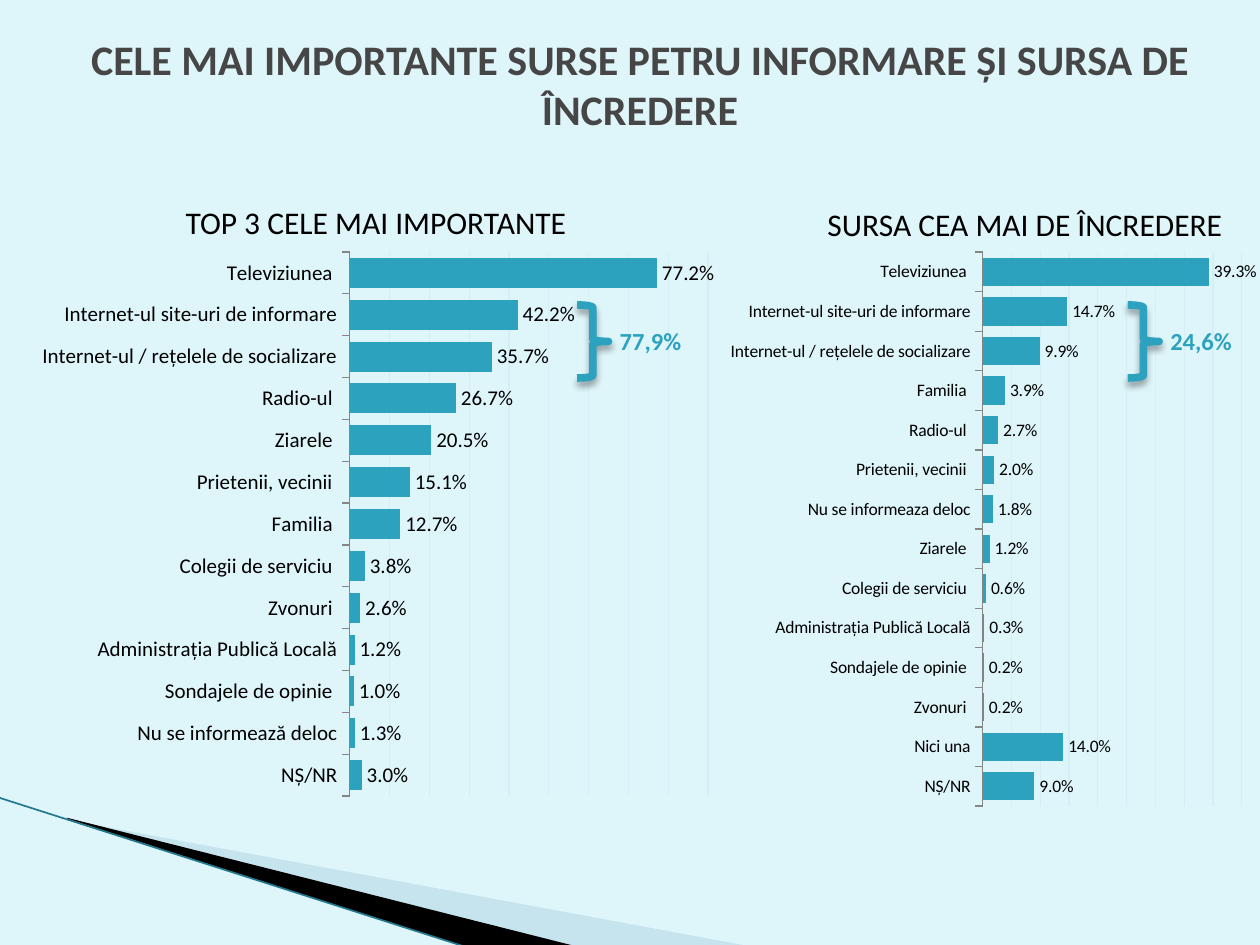
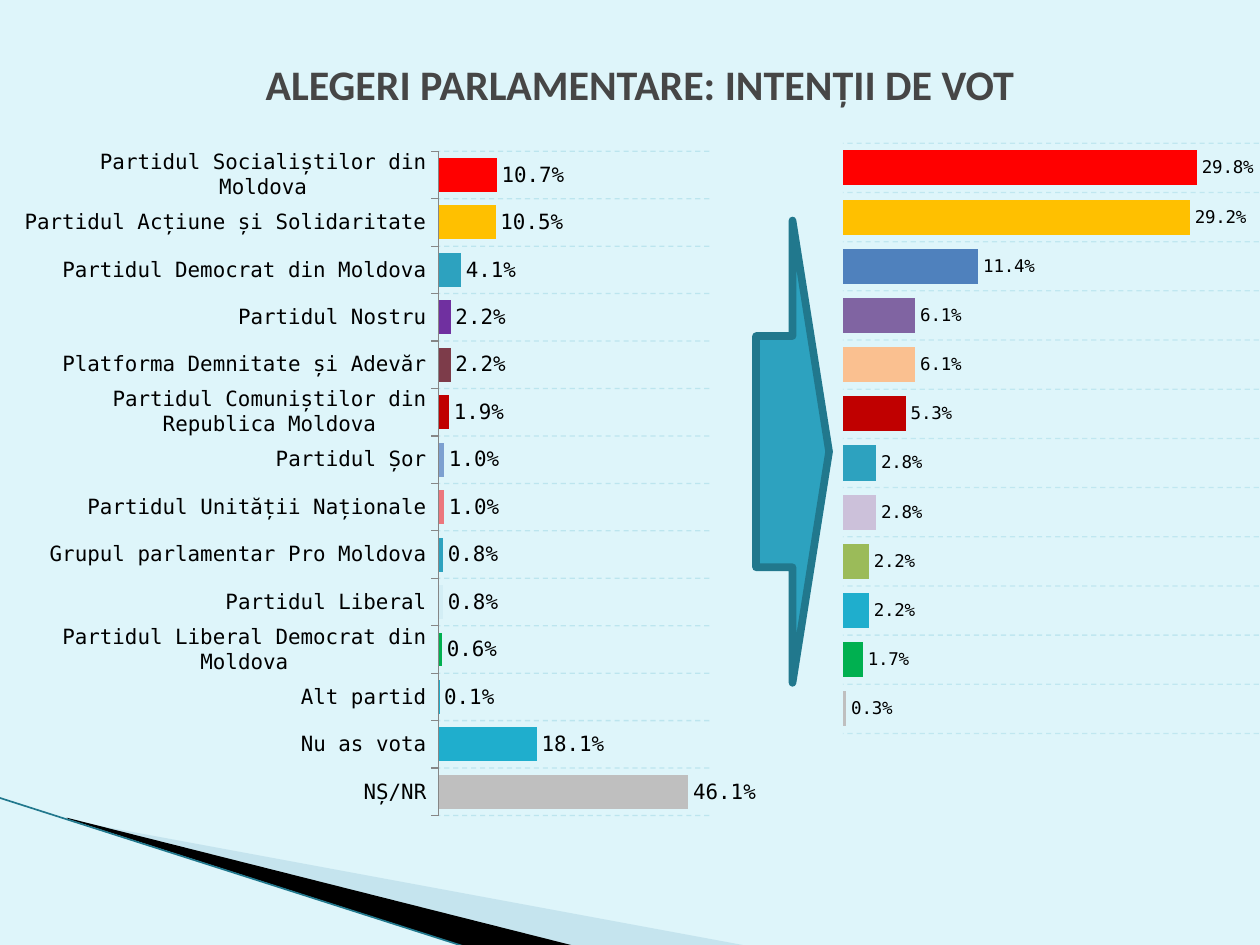
import pptx
import pptx.chart.data
import pptx.dml.color
import pptx.enum.chart
import pptx.enum.dml
import pptx.enum.shapes
import pptx.enum.text
import pptx.oxml
import pptx.oxml.ns
import pptx.util
from lxml import etree

Inches = pptx.util.Inches
Pt = pptx.util.Pt
RGBColor = pptx.dml.color.RGBColor
MSO_SHAPE = pptx.enum.shapes.MSO_SHAPE
qn = pptx.oxml.ns.qn

# Colours and fonts
BACKGROUND = RGBColor(0xDE, 0xF5, 0xFA)
TEAL = RGBColor(0x2D, 0xA2, 0xBF)
DARK_TEAL = RGBColor(0x21, 0x78, 0x8D)
PALE_TEAL = RGBColor(0xD3, 0xEE, 0xF5)
BAND_BLUE = RGBColor(0xA0, 0xCB, 0xDC)
BRIGHT_BLUE = RGBColor(0x1F, 0xAE, 0xCD)
TITLE_GREY = RGBColor(0x46, 0x46, 0x46)
AXIS_GREY = RGBColor(0x86, 0x86, 0x86)
LIGHT_GREY = RGBColor(0xBF, 0xBF, 0xBF)
BLACK = RGBColor(0, 0, 0)
RED = RGBColor(0xFF, 0, 0)
DARK_RED = RGBColor(0xC0, 0, 0)
AMBER = RGBColor(0xFF, 0xC0, 0)
GREEN = RGBColor(0, 0xB0, 0x50)
OLIVE = RGBColor(0x9B, 0xBB, 0x59)
PURPLE = RGBColor(0x70, 0x30, 0xA0)
VIOLET = RGBColor(0x80, 0x64, 0xA2)
LILAC = RGBColor(0xCC, 0xC1, 0xDA)
WINE = RGBColor(0x7D, 0x3C, 0x4A)
PINK = RGBColor(0xEC, 0x76, 0x7C)
SOFT_BLUE = RGBColor(0x7D, 0xA0, 0xD0)
MID_BLUE = RGBColor(0x4F, 0x81, 0xBD)
PEACH = RGBColor(0xFA, 0xC0, 0x90)
SANS, MONO = "Calibri", "DejaVu Sans Mono"

# Content: bars run from top to bottom as (category, percent[, colour])
SOURCES_TITLE = "CELE MAI IMPORTANTE SURSE PETRU INFORMARE ȘI SURSA DE ÎNCREDERE"
VOTE_TITLE = "ALEGERI PARLAMENTARE: INTENȚII DE VOT"

TOP_SOURCES = [
    ("Televiziunea ", 77.2), ("Internet-ul site-uri de informare", 42.2),
    ("Internet-ul / rețelele de socializare", 35.7), ("Radio-ul ", 26.7),
    ("Ziarele ", 20.5), ("Prietenii, vecinii ", 15.1), ("Familia ", 12.7),
    ("Colegii de serviciu ", 3.8), ("Zvonuri ", 2.6),
    ("Administrația Publică Locală", 1.2), ("Sondajele de opinie ", 1.0),
    ("Nu se informează deloc", 1.3), ("NȘ/NR", 3.0),
]
TRUSTED_SOURCES = [
    ("Televiziunea ", 39.3), ("Internet-ul site-uri de informare", 14.7),
    ("Internet-ul / rețelele de socializare", 9.9), ("Familia ", 3.9),
    ("Radio-ul ", 2.7), ("Prietenii, vecinii ", 2.0),
    ("Nu se informeaza deloc", 1.8), ("Ziarele ", 1.2),
    ("Colegii de serviciu ", 0.6), ("Administrația Publică Locală", 0.3),
    ("Sondajele de opinie ", 0.2), ("Zvonuri ", 0.2),
    ("Nici una", 14.0), ("NȘ/NR", 9.0),
]
ALL_VOTERS = [
    ("Partidul Socialiștilor din Moldova", 10.7, RED),
    ("Partidul Acțiune și Solidaritate", 10.5, AMBER),
    ("Partidul Democrat din Moldova", 4.1, TEAL),
    ("Partidul Nostru", 2.2, PURPLE),
    ("Platforma Demnitate și Adevăr", 2.2, WINE),
    ("Partidul Comuniștilor din Republica Moldova", 1.9, DARK_RED),
    ("Partidul Șor", 1.0, SOFT_BLUE),
    ("Partidul Unității Naționale", 1.0, PINK),
    ("Grupul parlamentar Pro Moldova", 0.8, TEAL),
    ("Partidul Liberal", 0.8, PALE_TEAL),
    ("Partidul Liberal Democrat din Moldova", 0.6, GREEN),
    ("Alt partid", 0.1, BRIGHT_BLUE),
    ("Nu as vota", 18.1, BRIGHT_BLUE),
    ("NȘ/NR", 46.1, LIGHT_GREY),
]
DECIDED_VOTERS = [
    ("12", 29.8, RED), ("11", 29.2, AMBER), ("10", 11.4, MID_BLUE),
    ("9", 6.1, VIOLET), ("8", 6.1, PEACH), ("7", 5.3, DARK_RED),
    ("6", 2.8, TEAL), ("5", 2.8, LILAC), ("4", 2.2, OLIVE),
    ("3", 2.2, BRIGHT_BLUE), ("2", 1.7, GREEN), ("1", 0.3, LIGHT_GREY),
]

# Charts: box in inches, plot area as shares of the box
SOURCE_CHARTS = [
    dict(bars=TOP_SOURCES, box=(0.23, 1.91, 5.5, 4.5), size=12, font=SANS,
         maximum=0.9, step=0.1, plot=(0.463, 0.02, 0.517, 0.96)),
    dict(bars=TRUSTED_SOURCES, box=(5.73, 1.91, 4.25, 4.58), size=10, font=SANS,
         maximum=0.45, step=0.05, plot=(0.487, 0.02, 0.484, 0.96)),
]
VOTE_CHARTS = [
    dict(bars=ALL_VOTERS, box=(0.17, 1.05, 5.83, 5.58), size=12, font=MONO,
         maximum=0.5, step=0.1, plot=(0.572, 0.027, 0.371, 0.945), row_lines=18),
    dict(bars=DECIDED_VOTERS, box=(6.62, 1.05, 3.43, 4.87), size=10, font=MONO,
         maximum=0.35, step=0.05, plot=(0.02, 0.018, 0.963, 0.962), row_lines=16,
         show_categories=False),
]
# Headings, and braces that join the two internet bars with their sum
HEADINGS = [("TOP 3 CELE MAI IMPORTANTE", 0.86, 1.56),
            ("SURSA CEA MAI DE ÎNCREDERE", 6.01, 1.58)]
BRACES = [("77,9%", 4.58), ("24,6%", 8.95)]

# Corner bands
LIGHT_BAND = [(0.55, 6.51), (5.95, 7.51), (4.56, 7.51), (0.55, 6.5)]
BLACK_BAND = [(0.53, 6.49), (4.57, 7.51), (3.72, 7.52), (0.54, 6.5)]


def inches(values):
    return [Inches(value) for value in values]


def set_format(target, **values):
    for name, value in values.items():
        setattr(target, name, value)


def set_font(font, color, **values):
    set_format(font, **values)
    font.color.rgb = color


def set_opacity(color_parent, percent):
    for color in color_parent.iter(qn("a:srgbClr")):
        etree.SubElement(color, qn("a:alpha"), val=str(percent * 1000))


def set_line(line, color, width):
    line.color.rgb = color
    line.width = Pt(width)


def write_text(frame, text, color, align, **font):
    frame.word_wrap = True
    paragraph = frame.paragraphs[0]
    paragraph.alignment = align
    run = paragraph.add_run()
    run.text = text
    set_font(run.font, color, name=SANS, **font)


def add_text(slide, box, *text, **font):
    write_text(slide.shapes.add_textbox(*inches(box)).text_frame, *text, **font)


def add_band(slide, points, color):
    start, *rest = [tuple(inches(point)) for point in points]
    builder = slide.shapes.build_freeform(*start)
    builder.add_line_segments(rest, close=True)
    band = builder.convert_to_shape()
    band.shadow.inherit = False
    band.fill.solid()
    band.fill.fore_color.rgb = color
    band.line.fill.background()
    return band


def add_titled_slide(presentation, text):
    slide = presentation.slides.add_slide(presentation.slide_layouts[5])
    # Corner bands and edge line
    light_band = add_band(slide, LIGHT_BAND, BAND_BLUE)
    set_opacity(light_band.element.spPr, 40)
    add_band(slide, BLACK_BAND, BLACK)
    edge = slide.shapes.add_connector(
        pptx.enum.shapes.MSO_CONNECTOR.STRAIGHT, *inches((-0.01, 6.33, 3.71, 7.52)))
    set_line(edge.line, DARK_TEAL, 0.95)
    etree.SubElement(edge.element.spPr, qn("a:effectLst"))
    # Title
    title = slide.shapes.title
    left, top, width, height = inches((0.58, 0.25, 9, 0.83))
    set_format(title, left=left, top=top, width=width, height=height)
    title.text_frame.vertical_anchor = pptx.enum.text.MSO_ANCHOR.MIDDLE
    write_text(title.text_frame, text, TITLE_GREY, pptx.enum.text.PP_ALIGN.CENTER,
               size=Pt(24), bold=True)
    return slide


def set_plot_area(chart, shares):
    plot_area = chart.element.find(".//" + qn("c:plotArea"))
    for old in plot_area.findall(qn("c:layout")):
        plot_area.remove(old)
    layout = etree.Element(qn("c:layout"))
    manual = etree.SubElement(layout, qn("c:manualLayout"))
    settings = [("layoutTarget", "inner"), ("xMode", "edge"), ("yMode", "edge"),
                *zip("xywh", shares)]
    for tag, value in settings:
        etree.SubElement(manual, qn("c:" + tag), val=str(value))
    plot_area.insert(0, layout)


def add_bar_chart(slide, bars, box, size, font, maximum, step, plot,
                  row_lines=None, show_categories=True):
    rows = bars[::-1]
    data = pptx.chart.data.CategoryChartData(number_format="0.0%")
    data.categories = [row[0] for row in rows]
    data.add_series("Series 1", [round(row[1] / 100, 3) for row in rows])
    chart = slide.shapes.add_chart(
        pptx.enum.chart.XL_CHART_TYPE.BAR_CLUSTERED, *inches(box), data).chart
    set_format(chart, has_legend=False, has_title=False)
    set_font(chart.font, BLACK, name=font, size=Pt(size))
    set_plot_area(chart, plot)

    # Axes and grid
    values, categories = chart.value_axis, chart.category_axis
    set_format(values, minimum_scale=0, maximum_scale=maximum, major_unit=step,
               visible=False, has_major_gridlines=row_lines is None)
    set_format(categories, visible=show_categories,
               has_major_gridlines=row_lines is not None,
               major_tick_mark=pptx.enum.chart.XL_TICK_MARK.OUTSIDE)
    set_line(categories.format.line, AXIS_GREY, 0.75)
    if row_lines is None:
        set_line(values.major_gridlines.format.line, PALE_TEAL, 0.75)
    else:
        grid_line = categories.major_gridlines.format.line
        set_line(grid_line, TEAL, 0.75)
        grid_line.dash_style = pptx.enum.dml.MSO_LINE.DASH
        set_opacity(categories._element.find(qn("c:majorGridlines")), row_lines)

    # Bars and value labels
    bar_plot = chart.plots[0]
    set_format(bar_plot, gap_width=40, overlap=-10, vary_by_categories=False,
               has_data_labels=True)
    set_format(bar_plot.data_labels, show_value=True, number_format="0.0%",
               number_format_is_linked=False,
               position=pptx.enum.chart.XL_LABEL_POSITION.OUTSIDE_END)
    series = bar_plot.series[0]
    series.invert_if_negative = False
    series.format.fill.solid()
    series.format.fill.fore_color.rgb = TEAL
    for index, (_, _, *colors) in enumerate(rows):
        for color in colors:
            fill = series.points[index].format.fill
            fill.solid()
            fill.fore_color.rgb = color


def add_outlined_shape(slide, kind, box, line_color):
    shape = slide.shapes.add_shape(kind, *inches(box))
    shape.shadow.inherit = False
    set_line(shape.line, line_color, 4.33)
    etree.SubElement(shape.line._get_or_add_ln(), qn("a:round"))
    return shape


def add_brace(slide, text, left):
    brace = add_outlined_shape(slide, MSO_SHAPE.RIGHT_BRACE, (left, 2.42, 0.25, 0.58), TEAL)
    brace.fill.background()
    shadow = etree.SubElement(
        brace.element.spPr.find(qn("a:effectLst")), qn("a:outerShdw"),
        blurRad=str(Pt(4)), dist=str(Pt(3)), dir="5400000", rotWithShape="0")
    etree.SubElement(shadow, qn("a:srgbClr"), val=str(BLACK))
    set_opacity(shadow, 35)
    add_text(slide, (left + 0.24, 2.54, 0.9, 0.34), text, TEAL,
             pptx.enum.text.PP_ALIGN.LEFT, size=Pt(14), bold=True)


def main():
    presentation = pptx.Presentation()
    set_format(presentation, slide_width=Inches(10), slide_height=Inches(7.5))
    background = presentation.slide_master.background.fill
    background.solid()
    background.fore_color.rgb = BACKGROUND

    # Slide 1: information sources
    slide = add_titled_slide(presentation, SOURCES_TITLE)
    for chart in SOURCE_CHARTS:
        add_bar_chart(slide, **chart)
    for text, left, top in HEADINGS:
        add_text(slide, (left, top, 4.25, 0.4), text, BLACK,
                 pptx.enum.text.PP_ALIGN.CENTER, size=Pt(18))
    for text, left in BRACES:
        add_brace(slide, text, left)

    # Slide 2: voting intentions
    slide = add_titled_slide(presentation, VOTE_TITLE)
    for chart in VOTE_CHARTS:
        add_bar_chart(slide, **chart)
    arrow = add_outlined_shape(slide, MSO_SHAPE.RIGHT_ARROW, (6, 1.75, 0.58, 3.67), DARK_TEAL)
    arrow.fill.solid()
    arrow.fill.fore_color.rgb = TEAL

    presentation.save("out.pptx")


if __name__ == "__main__":
    main()
